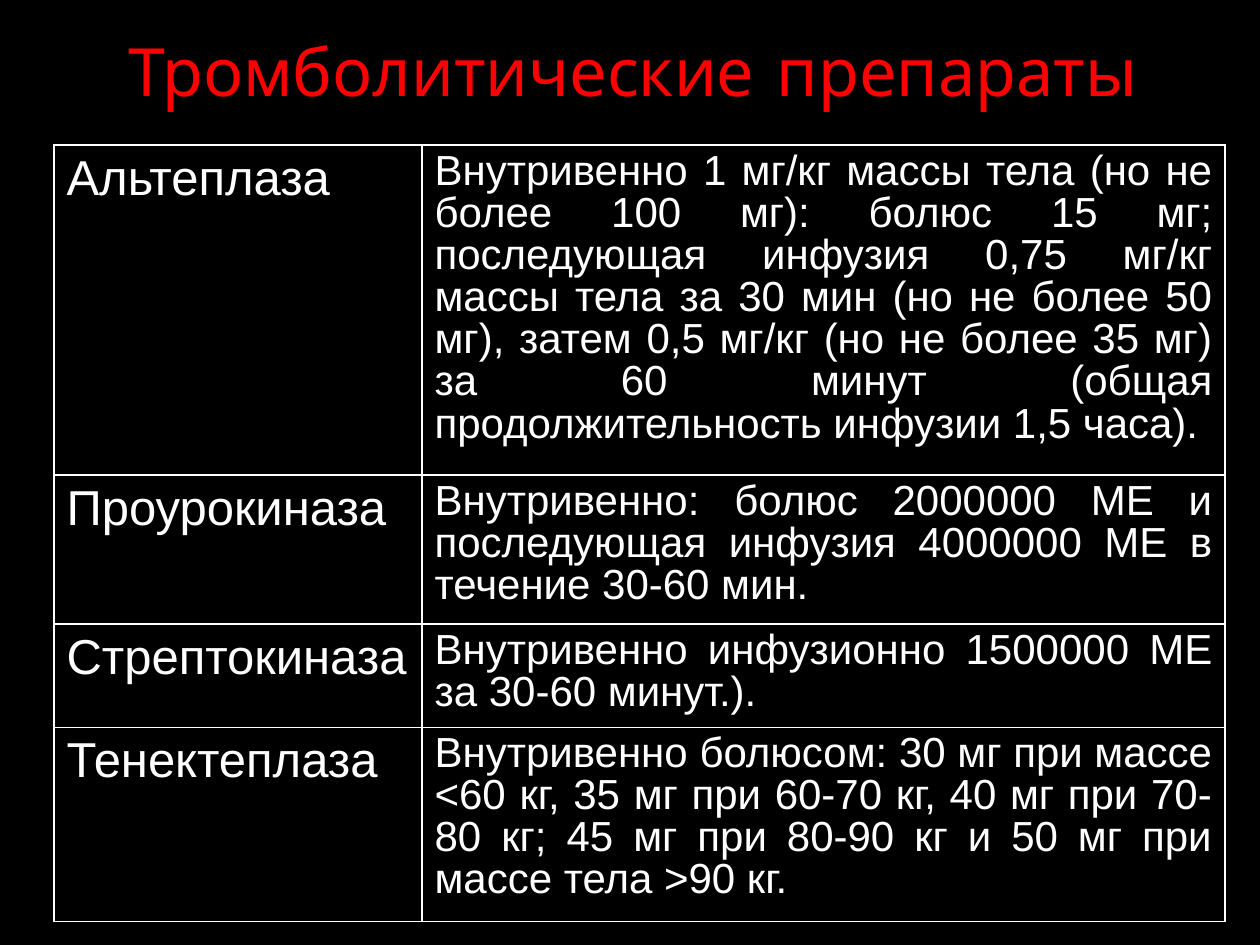
from lxml import etree
from pptx import Presentation
from pptx.dml.color import RGBColor
from pptx.enum.text import MSO_ANCHOR, PP_ALIGN
from pptx.oxml.ns import qn

MIDDLE = MSO_ANCHOR.MIDDLE
CENTER, JUSTIFY = PP_ALIGN.CENTER, PP_ALIGN.JUSTIFY
SCALE = 914400 / 126  # EMU in one px
THEME = {
    "back": "000000",
    "line": "FFFFFF",
    "title": {"name": "Comic Neue", "size": 38, "color": "FF0000"},
    "drug": {"name": "Arial", "size": 28, "color": "FFFFFF"},
    "dose": {"name": "Arial", "size": 24, "color": "FFFFFF"},
}
COLS = [368, 803]
ROWS = [
    (330, "Альтеплаза",
     "Внутривенно 1 мг/кг массы тела (но не более 100 мг): болюс 15 мг; "
     "последующая инфузия 0,75 мг/кг массы тела за 30 мин (но не более 50 мг), "
     "затем 0,5 мг/кг (но не более 35 мг) за 60 минут "
     "(общая продолжительность инфузии 1,5 часа). "),
    (149, "Проурокиназа",
     "Внутривенно: болюс 2000000 МЕ и последующая инфузия 4000000 МЕ "
     "в течение 30-60 мин. "),
    (103, "Стрептокиназа",
     "Внутривенно инфузионно 1500000 МЕ за 30-60 минут.)."),
    (194, "Тенектеплаза",
     "Внутривенно болюсом: 30 мг при массе <60 кг, 35 мг при 60-70 кг, "
     "40 мг при 70-80 кг; 45 мг при 80-90 кг и 50 мг при массе тела >90 кг."),
]


def px(num):
    """Turn px into EMU."""
    return round(num * SCALE)


def write(frame, text, style, align):
    para = frame.paragraphs[0]
    para.alignment = align
    run = para.add_run()
    run.text = text
    font = THEME[style]
    look = {"name": font["name"], "size": font["size"] * 12700}
    for key, val in look.items():
        setattr(run.font, key, val)
    run.font.color.rgb = RGBColor.from_string(font["color"])
    return para


deck = Presentation()
deck.slide_width, deck.slide_height = px(1260), px(945)
slide = deck.slides.add_slide(deck.slide_layouts[6])
slide.background.fill.solid()
slide.background.fill.fore_color.rgb = RGBColor.from_string(THEME["back"])

# Title
box = slide.shapes.add_textbox(px(44), px(35), px(1201), px(69))
frame = box.text_frame
frame.word_wrap = True
frame.vertical_anchor = MIDDLE
write(frame, "Тромболитические препараты ", "title", CENTER)

# Drugs and doses
high = sum(row[0] for row in ROWS)
table = slide.shapes.add_table(
    len(ROWS), len(COLS), px(54), px(145), px(sum(COLS)), px(high)).table
table.first_row = table.horz_banding = False
for col, width in zip(table.columns, COLS):
    col.width = px(width)

for row, (height, drug, dose) in zip(table.rows, ROWS):
    row.height = px(height)
    left, right = row.cells
    para = write(left.text_frame, drug, "drug", JUSTIFY)
    props = para._p.get_or_add_pPr()
    for key, val in {"marL": 48, "indent": -48}.items():
        props.set(key, str(px(val)))
    para = write(right.text_frame, dose, "dose", JUSTIFY)
    para.line_spacing = 0.9
    for cell in (left, right):
        props = cell._tc.get_or_add_tcPr()
        for side in ("lnL", "lnR", "lnT", "lnB"):
            edge = etree.SubElement(props, qn("a:" + side), w="12700")
            fill = etree.SubElement(edge, qn("a:solidFill"))
            etree.SubElement(fill, qn("a:srgbClr"), val=THEME["line"])
        cell.fill.background()

deck.save("out.pptx")
